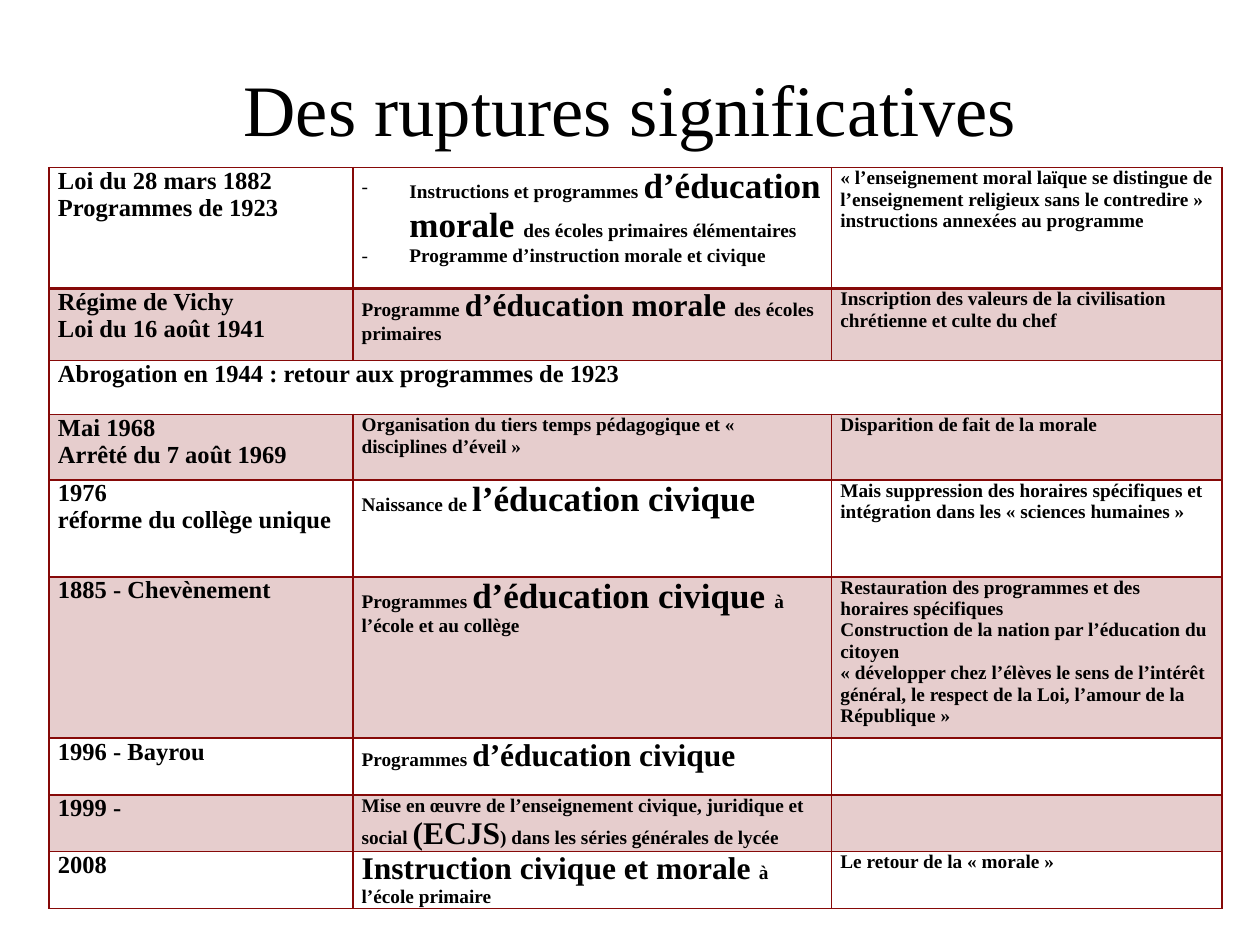
"""Build the slide on the turning points of moral and civic education."""
from lxml.etree import SubElement
from pptx import Presentation
from pptx.dml.color import RGBColor
from pptx.enum.text import MSO_ANCHOR, PP_ALIGN
from pptx.oxml import parse_xml
from pptx.oxml.ns import nsdecls, qn
from pptx.util import Inches, Pt

FONT, BLACK, RED = "Times New Roman", "000000", "860908"
DATE, BODY, MEDIUM, LARGE = 14, 11, 18, 20
TITLE = "Des ruptures significatives"
COLUMN_WIDTHS = [2.41, 3.8, 3.1]
SHADED_ROWS = {1, 3, 5, 7}
BULLETED_CELL = (0, 1)
MERGED_ROW = 2

# Each row: height, dates, programme paragraphs as (text, size) runs, remarks
PERIODS = [
    (0.96, ["Loi du 28 mars 1882", "Programmes de 1923"],
     [[("Instructions et programmes ", BODY), ("d’éducation morale ", LARGE),
       ("des écoles primaires élémentaires", BODY)],
      [("Programme d’instruction morale et civique", BODY)]],
     ["« l’enseignement moral laïque se distingue de l’enseignement religieux "
      "sans le contredire » instructions annexées au programme"]),
    (0.57, ["Régime de Vichy", "Loi du 16 août 1941"],
     [[("Programme ", BODY), ("d’éducation morale ", MEDIUM),
       ("des écoles primaires", BODY)]],
     ["Inscription des valeurs de la civilisation chrétienne et culte du chef"]),
    (0.43, ["Abrogation en 1944 : retour aux programmes de 1923"], [], []),
    (0.52, ["Mai 1968", "Arrêté du 7 août 1969"],
     [[("Organisation du tiers temps pédagogique et « disciplines d’éveil »", BODY)]],
     ["Disparition de fait de la morale"]),
    (0.77, ["1976", "réforme du collège unique"],
     [[("Naissance de ", BODY), ("l’éducation civique", LARGE)]],
     ["Mais suppression des horaires spécifiques et intégration dans les "
      "« sciences humaines »"]),
    (1.28, ["1885 - Chevènement"],
     [[("Programmes ", BODY), ("d’éducation civique ", LARGE),
       ("à l’école et au collège", BODY)]],
     ["Restauration des programmes et des horaires spécifiques",
      "Construction de la nation par l’éducation du citoyen",
      "« développer chez l’élèves le sens de l’intérêt général, le respect de "
      "la Loi, l’amour de la République »"]),
    (0.45, ["1996 - Bayrou"],
     [[("Programmes ", BODY), ("d’éducation civique", MEDIUM)]], []),
    (0.45, ["1999 -"],
     [[("Mise en œuvre de l’enseignement civique, juridique et social ", BODY),
       ("(ECJS", MEDIUM), (") dans les séries générales de lycée", BODY)]], []),
    (0.45, ["2008"],
     [[("Instruction civique et morale ", MEDIUM), ("à l’école primaire", BODY)]],
     ["Le retour de la « morale »"]),
]


def color(hex_value):
    return RGBColor.from_string(hex_value)


def add_run(paragraph, text, size, bold):
    run = paragraph.add_run()
    run.text = text
    run.font.name, run.font.size, run.font.bold = FONT, Pt(size), bold
    run.font.color.rgb = color(BLACK)


def add_dash(paragraph):
    properties = paragraph._p.get_or_add_pPr()
    indent = Inches(0.38)
    properties.set("marL", str(indent))
    properties.set("indent", str(-indent))
    SubElement(properties, qn("a:buFont"), typeface=FONT)
    SubElement(properties, qn("a:buChar"), char="-")


def write_cell(cell, paragraphs, bulleted):
    cell.margin_left = cell.margin_right = Inches(0.07)
    cell.margin_top = cell.margin_bottom = 0
    frame = cell.text_frame
    for index, runs in enumerate(paragraphs):
        paragraph = frame.add_paragraph() if index else frame.paragraphs[0]
        if bulleted:
            add_dash(paragraph)
        for text, size in runs:
            add_run(paragraph, text, size, True)


def paint_cell(cell, shaded):
    if shaded:
        cell.fill.solid()
        cell.fill.fore_color.rgb = color(RED)
        tint = cell._tc.tcPr.find(qn("a:solidFill")).find(qn("a:srgbClr"))
        SubElement(tint, qn("a:alpha"), val="20000")
    else:
        cell.fill.background()


def add_borders(cell, top, bottom):
    sides = [("L", 1), ("R", 1), ("T", top), ("B", bottom)]
    for index, (side, width) in enumerate(sides):
        cell._tc.get_or_add_tcPr().insert(index, parse_xml(
            f'<a:ln{side} {nsdecls("a")} w="{Pt(width)}"><a:solidFill>'
            f'<a:srgbClr val="{RED}"/></a:solidFill></a:ln{side}>'))


def add_title(slide):
    title = slide.shapes.title
    title.left, title.top, title.width, title.height = map(Inches, (1, 0.55, 8, 0.6))
    frame = title.text_frame
    frame.margin_top = frame.margin_bottom = 0
    frame.vertical_anchor = MSO_ANCHOR.MIDDLE
    frame.paragraphs[0].alignment = PP_ALIGN.CENTER
    add_run(frame.paragraphs[0], TITLE, 41.4, False)


def add_periods(slide):
    height = sum(period[0] for period in PERIODS)
    table = slide.shapes.add_table(
        len(PERIODS), len(COLUMN_WIDTHS), Inches(0.39), Inches(1.33),
        Inches(sum(COLUMN_WIDTHS)), Inches(height)).table
    table.first_row = table.horz_banding = False
    for column, width in zip(table.columns, COLUMN_WIDTHS):
        column.width = Inches(width)
    for row, (height, dates, programme, remarks) in enumerate(PERIODS):
        table.rows[row].height = Inches(height)
        contents = [[[(text, DATE)] for text in dates], programme,
                    [[(text, BODY)] for text in remarks]]
        for column, paragraphs in enumerate(contents):
            cell = table.cell(row, column)
            write_cell(cell, paragraphs, (row, column) == BULLETED_CELL)
            paint_cell(cell, row in SHADED_ROWS)
            add_borders(cell, 2 if row == 1 else 1, 2 if row == 0 else 1)
    table.cell(MERGED_ROW, 0).merge(table.cell(MERGED_ROW, len(COLUMN_WIDTHS) - 1))


def main():
    deck = Presentation()
    deck.slide_width, deck.slide_height = Inches(10), Inches(7.5)
    slide = deck.slides.add_slide(deck.slide_layouts[5])
    add_title(slide)
    add_periods(slide)
    deck.save("out.pptx")


if __name__ == "__main__":
    main()
